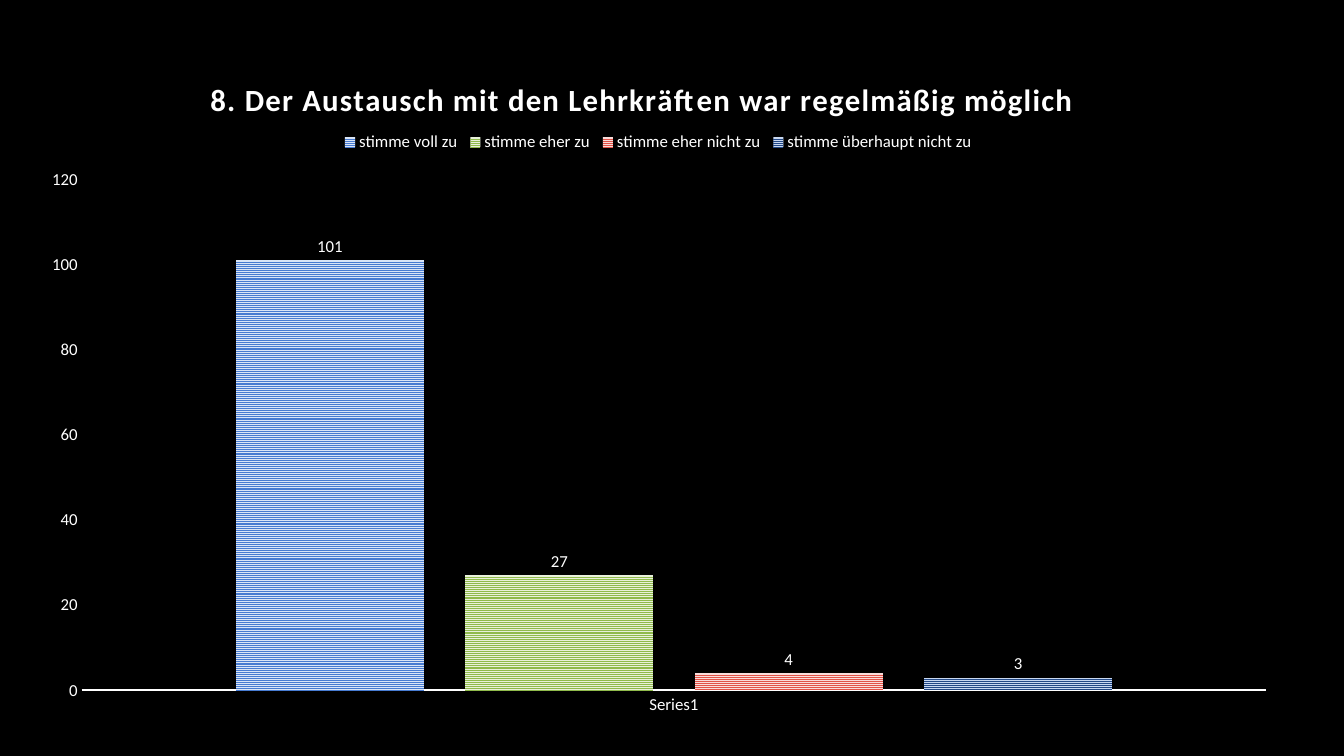
from lxml.etree import SubElement
from pptx import Presentation
from pptx.chart.data import CategoryChartData
from pptx.dml.color import RGBColor
from pptx.enum.chart import (XL_CHART_TYPE, XL_LABEL_POSITION,
                             XL_LEGEND_POSITION, XL_TICK_MARK)
from pptx.enum.dml import MSO_PATTERN
from pptx.oxml.ns import qn
from pptx.util import Inches, Pt

BLACK = RGBColor(0x00, 0x00, 0x00)
WHITE = RGBColor(0xFF, 0xFF, 0xFF)
BLUE, PALE_BLUE = RGBColor(0x47, 0x7B, 0xD1), RGBColor(0xDA, 0xE5, 0xF6)
GREEN, PALE_GREEN = RGBColor(0x90, 0xBA, 0x4C), RGBColor(0xE9, 0xF1, 0xDB)
RED, PALE_RED = RGBColor(0xE2, 0x52, 0x47), RGBColor(0xF9, 0xDC, 0xDA)
NAVY, PALE_NAVY = RGBColor(0x22, 0x48, 0x86), RGBColor(0xC8, 0xD8, 0xF1)

# Chart frame on the slide: left, top, width, height in inches
FRAME = (0.27, 0.44, 12.54, 6.77)
TITLE = "8. Der Austausch mit den Lehrkräften war regelmäßig möglich"
ANSWERS = [
    ("stimme voll zu", 101, BLUE, PALE_BLUE),
    ("stimme eher zu", 27, GREEN, PALE_GREEN),
    ("stimme eher nicht zu", 4, RED, PALE_RED),
    ("stimme überhaupt nicht zu", 3, NAVY, PALE_NAVY),
]


def style(font, size=12, bold=False):
    font.name = "Calibri"
    font.size = Pt(size)
    font.bold = bold
    font.color.rgb = WHITE


def write(frame, text, gap=0, **form):
    """Put text in a frame; gap is the letter spacing in points."""
    para = frame.paragraphs[0]
    run = para.add_run()
    run.text = text
    for font in (para.font, run.font):
        style(font, **form)
    run.font._element.set("spc", str(gap * 100))


def place(node, left, top, width=None, height=None, inner=False):
    """Place a chart part, given in slide inches, within the frame."""
    layout = node.get_or_add_layout() if hasattr(
        node, "get_or_add_layout") else node.find(qn("c:layout"))
    if layout is None:
        layout = SubElement(node, qn("c:layout"))
        node.insert(0, layout)
    for old in list(layout):
        layout.remove(old)
    manual = SubElement(layout, qn("c:manualLayout"))
    parts = [("xMode", "edge"), ("yMode", "edge"),
             ("x", (left - FRAME[0]) / FRAME[2]),
             ("y", (top - FRAME[1]) / FRAME[3])]
    if inner:
        parts.insert(0, ("layoutTarget", "inner"))
    if width:
        parts += [("w", width / FRAME[2]), ("h", height / FRAME[3])]
    for name, val in parts:
        SubElement(manual, qn("c:" + name)).set("val", str(val))


def add_bars(slide):
    data = CategoryChartData()
    data.categories = ["Series1"]
    for name, count, _, _ in ANSWERS:
        data.add_series(name, [count])
    box = [Inches(n) for n in FRAME]
    chart = slide.shapes.add_chart(
        XL_CHART_TYPE.COLUMN_CLUSTERED, *box, data).chart
    style(chart.font, size=10)
    plot = chart.plots[0]
    plot.gap_width = 164
    plot.overlap = -22
    plot.vary_by_categories = False
    for series, (_, _, front, back) in zip(plot.series, ANSWERS):
        paint(series, front, back)
    place(chart._chartSpace.chart.plotArea, 0.81, 1.78, 11.75, 5.07, inner=True)
    return chart


def paint(series, front, back):
    fill = series.format.fill
    fill.patterned()
    fill.pattern = MSO_PATTERN.NARROW_HORIZONTAL
    fill.fore_color.rgb = front
    fill.back_color.rgb = back
    series.invert_if_negative = False
    labels = series.data_labels
    labels.show_value = True
    labels.position = XL_LABEL_POSITION.OUTSIDE_END
    style(labels.font)


def set_axes(chart):
    base, scale = chart.category_axis, chart.value_axis
    for axis in (base, scale):
        axis.has_major_gridlines = False
        axis.major_tick_mark = XL_TICK_MARK.NONE
        axis.minor_tick_mark = XL_TICK_MARK.NONE
        style(axis.tick_labels.font)
    base.format.line.color.rgb = WHITE
    base.format.line.width = Pt(1.5)
    scale.format.line.fill.background()
    scale.minimum_scale = 0
    scale.maximum_scale = 120
    scale.major_unit = 20


def set_heads(chart):
    # Title
    chart.has_title = True
    title = chart.chart_title
    write(title.text_frame, TITLE, gap=1, size=22, bold=True)
    title.include_in_layout = False
    place(title._element, 2.03, 0.72)
    # Legend
    chart.has_legend = True
    legend = chart.legend
    legend.position = XL_LEGEND_POSITION.TOP
    legend.include_in_layout = False
    style(legend.font)
    node = legend._element
    place(node, 3.35, 1.28, 6.36, 0.26)
    node.find(qn("c:legendPos")).addnext(node.find(qn("c:layout")))


def main():
    deck = Presentation()
    deck.slide_width = Inches(13.33)
    deck.slide_height = Inches(7.5)
    slide = deck.slides.add_slide(deck.slide_layouts[6])
    slide.background.fill.solid()
    slide.background.fill.fore_color.rgb = BLACK
    chart = add_bars(slide)
    set_axes(chart)
    set_heads(chart)
    deck.save("out.pptx")


if __name__ == "__main__":
    main()
